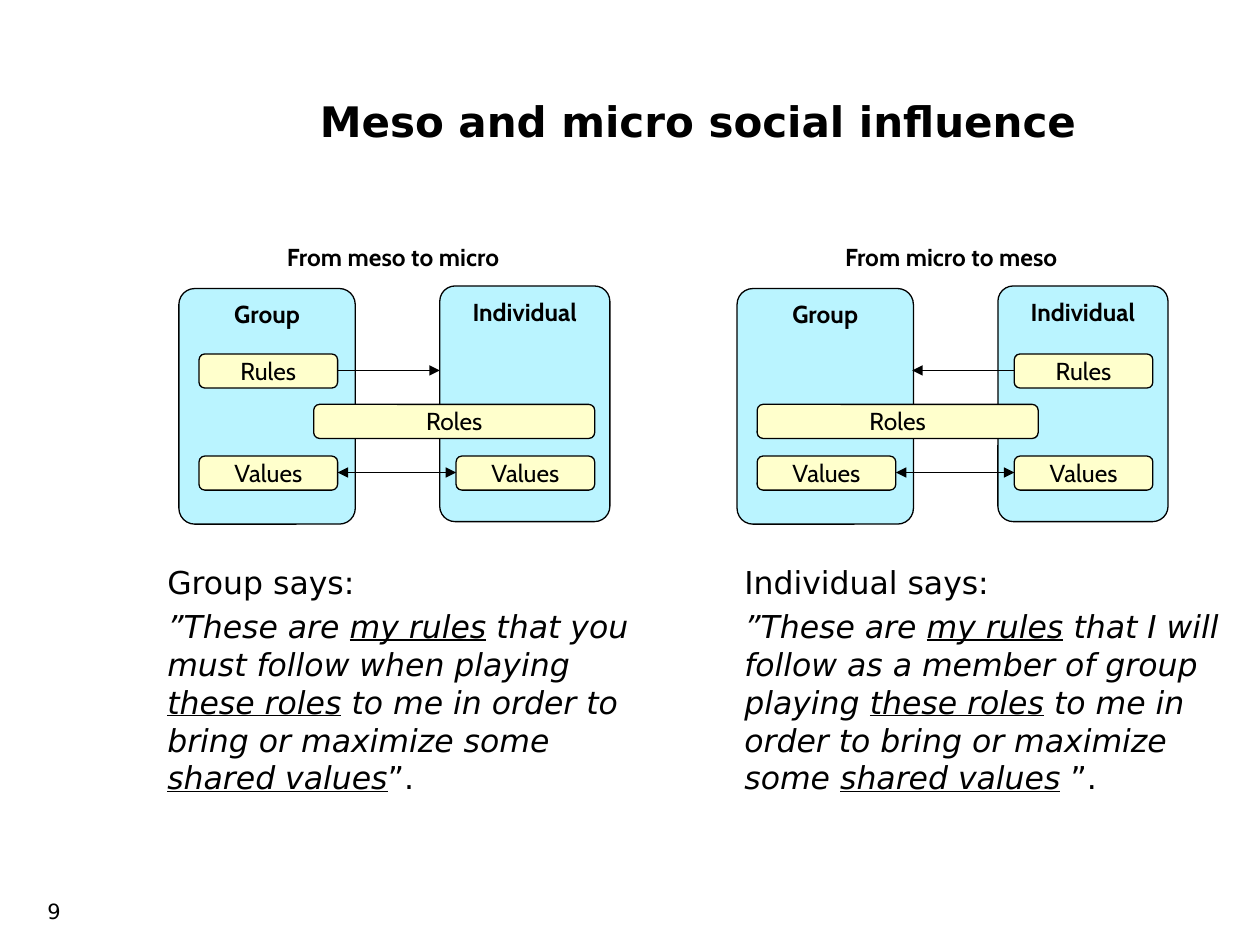
from dataclasses import dataclass

from lxml.etree import SubElement
from pptx import Presentation
from pptx.dml.color import RGBColor
from pptx.enum.shapes import MSO_CONNECTOR, MSO_SHAPE
from pptx.enum.text import MSO_ANCHOR, PP_ALIGN
from pptx.oxml.ns import qn
from pptx.util import Inches, Pt

COLORS = {"ink": "000000", "panel": "BAF4FF", "box": "FFFFCC"}
HEADING_FONT = "DejaVu Sans"
DIAGRAM_FONT = "Cabin"
DIAGRAM_SHIFT = 4.43  # distance between the two diagrams
BOX_HEIGHT = 0.27
ROWS = {"Rules": 2.81, "Roles": 3.21, "Values": 3.62}
GROUP_BOX, INDIVIDUAL_BOX = 1.58, 3.62
BOX_WIDTH, ROLES_WIDTH = 1.1, 2.23


@dataclass(frozen=True)
class Box:
    label: str
    left: float
    width: float = BOX_WIDTH


@dataclass(frozen=True)
class Arrow:
    row: str
    start: float
    end: float
    head: bool
    tail: bool


@dataclass(frozen=True)
class Diagram:
    caption: str
    shift: float
    boxes: tuple[Box, ...]
    arrows: tuple[Arrow, ...]


@dataclass(frozen=True)
class Statement:
    speaker: str
    left: float
    quote: tuple[str, ...]  # every second piece is underlined
    ending: str


SHARED_BOXES = (Box("Values", GROUP_BOX), Box("Values", INDIVIDUAL_BOX))
VALUES_ARROW = Arrow("Values", 2.68, 3.62, head=True, tail=True)

DIAGRAMS = (
    Diagram("From meso to micro", 0,
            (Box("Rules", GROUP_BOX), Box("Roles", 2.49, ROLES_WIDTH), *SHARED_BOXES),
            (Arrow("Rules", 2.68, 3.49, head=False, tail=True), VALUES_ARROW)),
    Diagram("From micro to meso", DIAGRAM_SHIFT,
            (Box("Rules", INDIVIDUAL_BOX), Box("Roles", GROUP_BOX, ROLES_WIDTH), *SHARED_BOXES),
            (Arrow("Rules", 2.81, 3.62, head=True, tail=False), VALUES_ARROW)),
)

STATEMENTS = (
    Statement("Group says:", 0.92,
              ("”These are ", "my rules", " that you must follow when playing ", "these roles",
               " to me in order to bring or maximize some ", "shared values"), "”."),
    Statement("Individual says:", 5.5,
              ("”These are ", "my rules", " that I will follow as a member of group playing ",
               "these roles", " to me in order to bring or maximize some ", "shared values"),
              " ”."),
)


def color(name: str) -> RGBColor:
    return RGBColor.from_string(COLORS[name])


def style(paragraph, font: str, size: float, bold: bool = False) -> None:
    paragraph.font.name = font
    paragraph.font.size = Pt(size)
    paragraph.font.bold = bold
    paragraph.font.color.rgb = color("ink")


def write(shape, text: str, font: str, size: float, bold: bool = False,
          align=PP_ALIGN.CENTER, anchor=MSO_ANCHOR.TOP, inset: bool = True) -> None:
    frame = shape.text_frame
    frame.word_wrap = True
    frame.vertical_anchor = anchor
    if not inset:
        frame.margin_left = frame.margin_right = Inches(0)
        frame.margin_top = frame.margin_bottom = Inches(0)
    paragraph = frame.paragraphs[0]
    paragraph.text = text
    paragraph.alignment = align
    style(paragraph, font, size, bold)


def add_text_box(slide, left: float, top: float, width: float, height: float):
    return slide.shapes.add_textbox(Inches(left), Inches(top), Inches(width), Inches(height))


def add_rounded(slide, left: float, top: float, width: float, height: float,
                fill: str, corner: float):
    shape = slide.shapes.add_shape(MSO_SHAPE.ROUNDED_RECTANGLE, Inches(left), Inches(top),
                                   Inches(width), Inches(height))
    shape.adjustments[0] = corner
    shape.shadow.inherit = False
    shape.fill.solid()
    shape.fill.fore_color.rgb = color(fill)
    shape.line.color.rgb = color("ink")
    shape.line.width = Pt(0.75)
    return shape


def add_arrow(slide, arrow: Arrow, shift: float) -> None:
    y = Inches(ROWS[arrow.row] + 0.13)
    line = slide.shapes.add_connector(MSO_CONNECTOR.STRAIGHT, Inches(arrow.start + shift), y,
                                      Inches(arrow.end + shift), y)
    line.line.color.rgb = color("ink")
    line.line.width = Pt(0.75)
    outline = line.line._get_or_add_ln()
    for tag, shown in (("a:headEnd", arrow.head), ("a:tailEnd", arrow.tail)):
        if shown:
            SubElement(outline, qn(tag), type="triangle")
    SubElement(line._element.spPr, qn("a:effectLst"))


def add_diagram(slide, diagram: Diagram) -> None:
    shift = diagram.shift
    for label, left, top, width in (("Group", 1.42, 2.29, 1.4), ("Individual", 3.49, 2.27, 1.35)):
        panel = add_rounded(slide, left + shift, top, width, 1.87, "panel", 0.09)
        write(panel, label, DIAGRAM_FONT, 14, bold=True)
    for box in diagram.boxes:
        shape = add_rounded(slide, box.left + shift, ROWS[box.label], box.width, BOX_HEIGHT,
                            "box", 0.17)
        write(shape, box.label, DIAGRAM_FONT, 14, inset=False)
    for arrow in diagram.arrows:
        add_arrow(slide, arrow, shift)
    caption = add_text_box(slide, 1.67 + shift, 1.92, 2.9, 0.27)
    write(caption, diagram.caption, DIAGRAM_FONT, 14, bold=True, inset=False)


def add_statement(slide, statement: Statement) -> None:
    box = add_text_box(slide, statement.left, 4.42, 4.33, 2.92)
    write(box, statement.speaker, HEADING_FONT, 18, align=PP_ALIGN.LEFT)
    quote = box.text_frame.add_paragraph()
    quote.space_before = Pt(3.6)
    for index, piece in enumerate(statement.quote):
        run = quote.add_run()
        run.text = piece
        run.font.italic = True
        run.font.underline = index % 2 == 1
    quote.add_run().text = statement.ending
    style(quote, HEADING_FONT, 18)
    for paragraph in box.text_frame.paragraphs:
        properties = paragraph._p.get_or_add_pPr()
        properties.set("marL", str(Inches(0.31)))
        properties.set("indent", "0")


def main() -> None:
    deck = Presentation()
    deck.slide_width, deck.slide_height = Inches(10), Inches(7.5)
    slide = deck.slides.add_slide(deck.slide_layouts[6])

    # Slide number and title
    write(add_text_box(slide, 0, 7.08, 0.58, 0.42), "9", HEADING_FONT, 12, align=PP_ALIGN.RIGHT)
    write(add_text_box(slide, 1.5, 0.33, 8.08, 1.25), "Meso and micro social influence",
          HEADING_FONT, 24, bold=True, anchor=MSO_ANCHOR.MIDDLE)

    # Diagrams with the statements below them
    for diagram in DIAGRAMS:
        add_diagram(slide, diagram)
    for statement in STATEMENTS:
        add_statement(slide, statement)

    deck.save("out.pptx")


if __name__ == "__main__":
    main()
